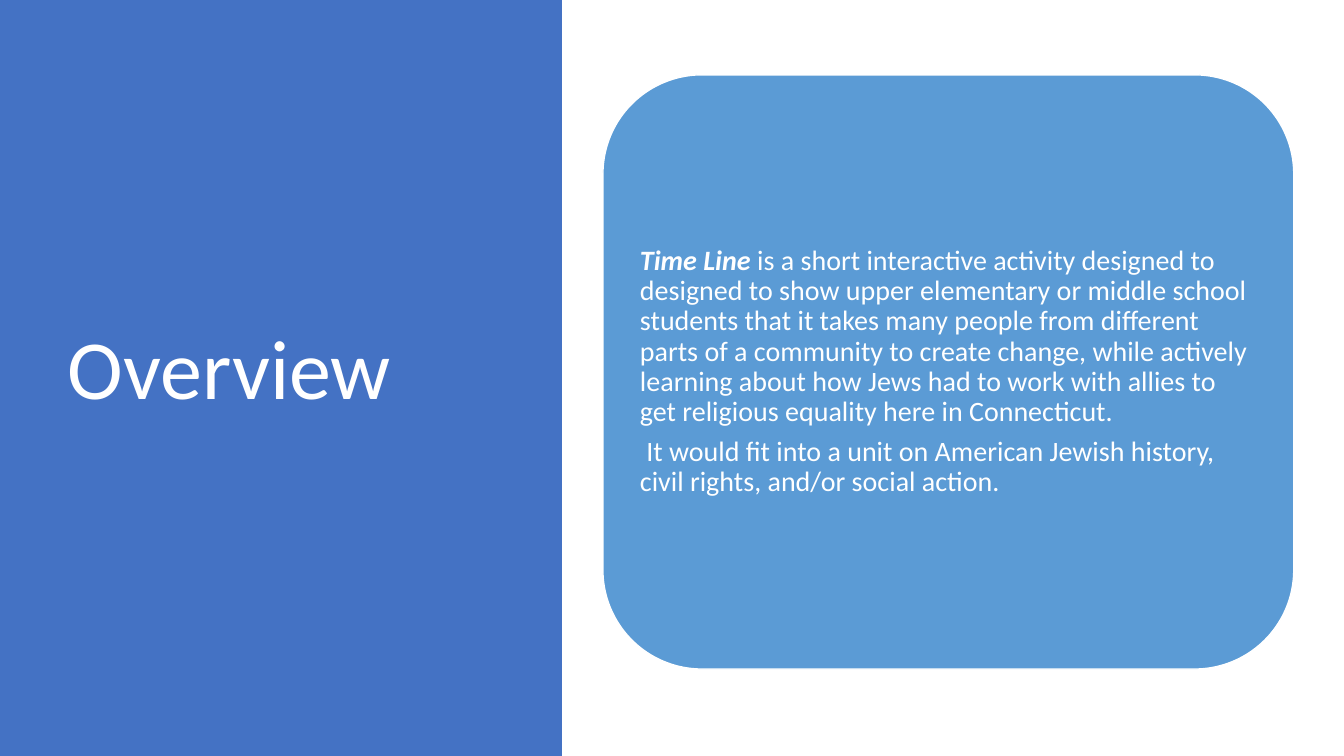
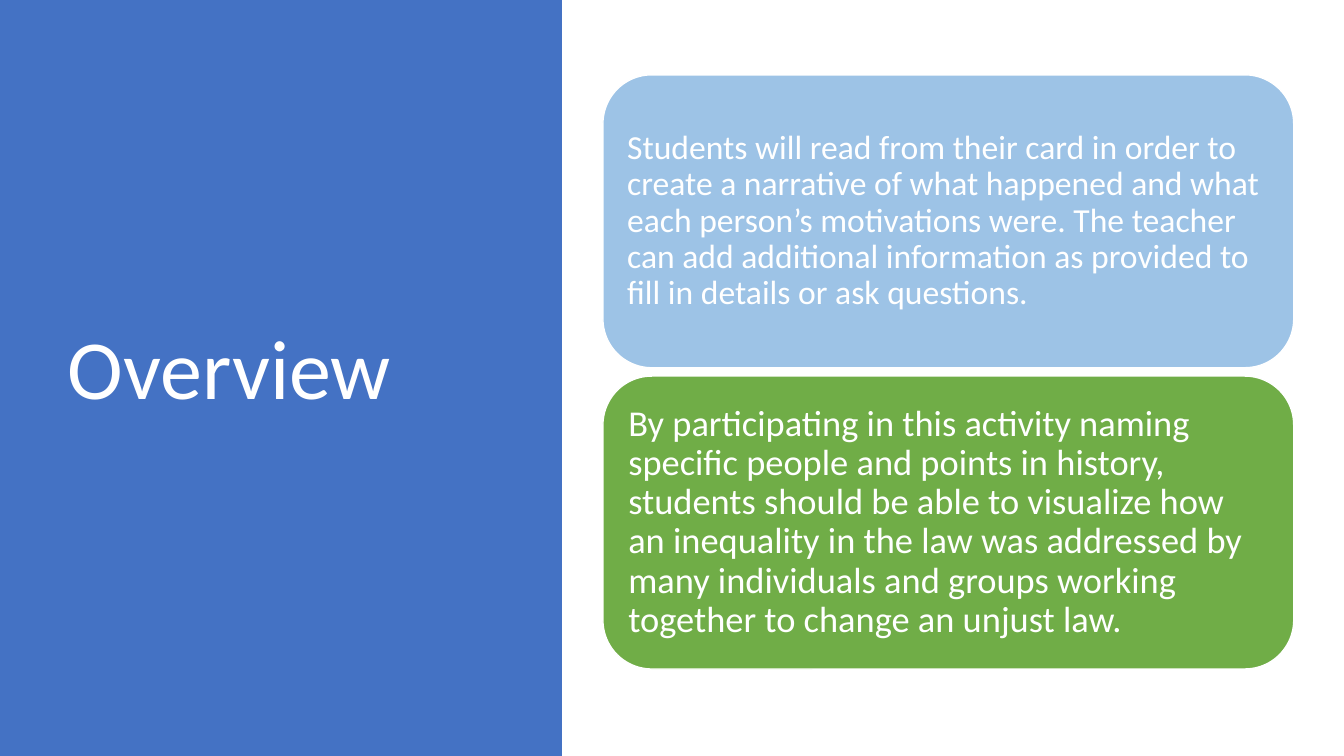
from dataclasses import dataclass

from pptx import Presentation
from pptx.dml.color import RGBColor as RGB
from pptx.enum.shapes import MSO_SHAPE as Shape
from pptx.enum.text import MSO_ANCHOR as Anchor, MSO_AUTO_SIZE as Fit, PP_ALIGN as Align
from pptx.util import Inches, Pt

WIDE, HIGH = Inches(13.33), Inches(7.5)
FONT = "Calibri"
HUES = {
    "white": "FFFFFF",
    "band": "4472C4",
    "blue": "5B9BD5",
    "pale": "9DC3E6",
    "green": "70AD47",
}


@dataclass(frozen=True)
class Box:
    """A place on the slide, in percent of its width and height."""
    left: float
    top: float
    width: float
    height: float

    def emu(self) -> tuple[int, int, int, int]:
        return (int(WIDE * self.left / 100), int(HIGH * self.top / 100),
                int(WIDE * self.width / 100), int(HIGH * self.height / 100))


@dataclass(frozen=True)
class Run:
    text: str
    strong: bool = False


@dataclass(frozen=True)
class Card:
    hue: str
    size: int
    inset: float
    paras: list[list[Run]]


BAND = Box(0, 0, 41.8, 100)
TITLE = Box(4.28, 9.07, 31.2, 80.27)
STACK = Box(44.86, 9.9, 51.4, 78.6)
GAP = 1.1

DECK = [
    ("Overview", [
        Card("blue", 20, 0.08, [
            [Run("Time Line", strong=True),
             Run(" is a short interactive activity designed to designed to show upper "
                 "elementary or middle school students that it takes many people from "
                 "different parts of a community to create change, while actively learning "
                 "about how Jews had to work with allies to get religious equality here in "
                 "Connecticut.")],
            [Run(" It would fit into a unit on American Jewish history, civil rights, "
                 "and/or social action.")],
        ]),
    ]),
    ("Overview", [
        Card("pale", 24, 0.1, [
            [Run("Students will read from their card in order to create a narrative of what "
                 "happened and what each person’s motivations were. The teacher can add "
                 "additional information as provided to fill in details or ask questions.")],
        ]),
        Card("green", 26, 0.11, [
            [Run("By participating in this activity naming specific people and points in "
                 "history, students should be able to visualize how an inequality in the law "
                 "was addressed by many individuals and groups working together to change an "
                 "unjust law.")],
        ]),
    ]),
]


def tint(name: str) -> RGB:
    return RGB.from_string(HUES[name])


def write(shape, paras: list[list[Run]], *, size: int, inset: float = 0.1,
          after: float = 0, hue: str = "white") -> None:
    """Fill a shape with left-aligned, vertically centred text."""
    frame = shape.text_frame
    frame.word_wrap, frame.auto_size = True, Fit.NONE
    frame.vertical_anchor = Anchor.MIDDLE
    frame.margin_left = frame.margin_right = Inches(inset)
    frame.margin_top = frame.margin_bottom = Inches(inset)
    for i, runs in enumerate(paras):
        para = frame.add_paragraph() if i else frame.paragraphs[0]
        para.alignment, para.line_spacing = Align.LEFT, 0.9
        para.space_before, para.space_after = Pt(0), Pt(after)
        for part in runs:
            run = para.add_run()
            run.text = part.text
            font = run.font
            font.name, font.size = FONT, Pt(size)
            font.bold = font.italic = part.strong
            font.color.rgb = tint(hue)


def block(slide, kind: Shape, box: Box, hue: str, edge: str | None = None):
    shape = slide.shapes.add_shape(kind, *box.emu())
    shape.shadow.inherit = False
    shape.fill.solid()
    shape.fill.fore_color.rgb = tint(hue)
    if edge:
        shape.line.color.rgb = tint(edge)
        shape.line.width = Pt(1)
    else:
        shape.line.fill.background()
    return shape


def frame(slide, text: str) -> None:
    """Draw the side band with the slide title on it."""
    title = slide.shapes.title
    band = block(slide, Shape.RECTANGLE, BAND, "band")
    title.element.addprevious(band.element)
    title.left, title.top, title.width, title.height = TITLE.emu()
    write(title, [[Run(text)]], size=60)


def stack(slide, cards: list[Card]) -> None:
    """Share the height of the stack equally among the cards."""
    tall = (STACK.height - GAP * (len(cards) - 1)) / len(cards)
    for i, card in enumerate(cards):
        box = Box(STACK.left, STACK.top + i * (tall + GAP), STACK.width, tall)
        shape = block(slide, Shape.ROUNDED_RECTANGLE, box, card.hue, edge="white")
        write(shape, card.paras, size=card.size, inset=card.inset, after=card.size * 0.35)


def main() -> None:
    deck = Presentation()
    deck.slide_width, deck.slide_height = WIDE, HIGH
    plain = deck.slide_layouts.get_by_name("Title Only")
    for title, cards in DECK:
        slide = deck.slides.add_slide(plain)
        frame(slide, title)
        stack(slide, cards)
    deck.save("out.pptx")


if __name__ == "__main__":
    main()
